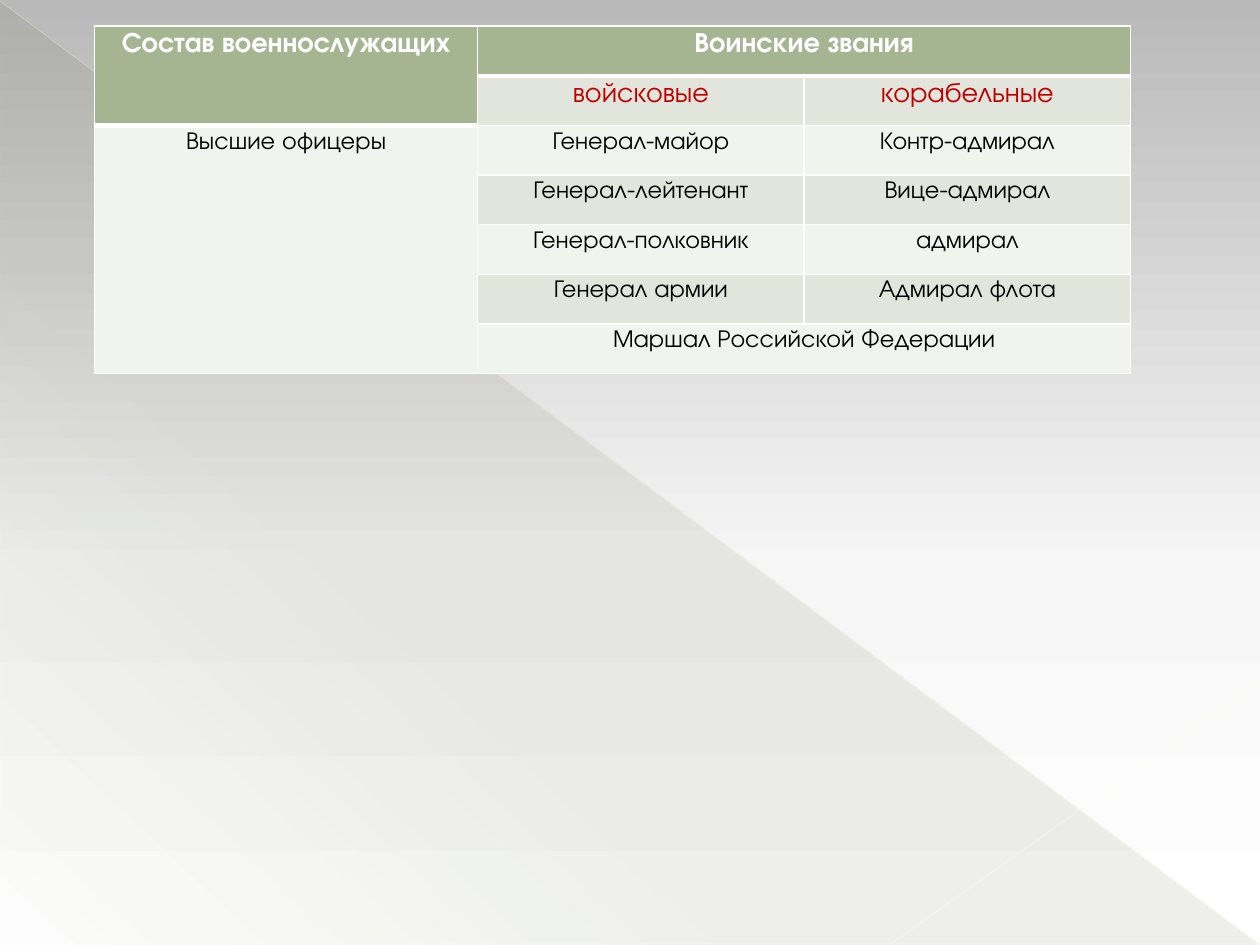
from dataclasses import dataclass

from pptx import Presentation
from pptx.dml.color import RGBColor
from pptx.enum.shapes import MSO_CONNECTOR, MSO_SHAPE
from pptx.enum.text import PP_ALIGN
from pptx.oxml import parse_xml
from pptx.oxml.ns import nsdecls
from pptx.util import Pt


@dataclass(frozen=True)
class Theme:
    font: str = "TeX Gyre Adventor"
    head_size: int = 16
    body_size: int = 14
    white: str = "FFFFFF"
    black: str = "000000"
    red: str = "C00000"
    header: str = "A5B592"
    bands: tuple = ("F0F3EE", "E1E5DC")
    back: tuple = ((0, "B9B9B9", 100), (60, "F6F6F6", 100), (100, "FFFFFF", 100))
    wedge: tuple = ((0, "444D26", 10), (70, "444D26", 8), (100, "444D26", 1))
    diagonal: str = "FFFDE3"
    corner: str = "FFFDE6"


def color_xml(rgb, opacity=100):
    return f'<a:srgbClr val="{rgb}"><a:alpha val="{opacity * 1000}"/></a:srgbClr>'


def set_gradient(fill, element, stops, angle):
    """Swap the element's fill for a linear gradient, angle clockwise in degrees."""
    fill.solid()
    solid = element.xpath(".//a:solidFill")[0]
    gs = "".join(f'<a:gs pos="{pos * 1000}">{color_xml(rgb, opacity)}</a:gs>'
                 for pos, rgb, opacity in stops)
    solid.getparent().replace(solid, parse_xml(
        f'<a:gradFill {nsdecls("a")} rotWithShape="1"><a:gsLst>{gs}</a:gsLst>'
        f'<a:lin ang="{angle * 60000}" scaled="0"/></a:gradFill>'))


class Deck:
    def __init__(self, theme, width, height):
        self.theme = theme
        self.prs = Presentation()
        self.prs.slide_width, self.prs.slide_height = Pt(width), Pt(height)
        self.s = self.prs.slides.add_slide(self.prs.slide_layouts[6])

    def background(self, stops, angle):
        set_gradient(self.s.background.fill, self.s.element.cSld, stops, angle)

    def triangle(self, x, y, w, h, stops, angle):
        sp = self.s.shapes.add_shape(MSO_SHAPE.RIGHT_TRIANGLE, Pt(x), Pt(y), Pt(w), Pt(h))
        sp.shadow.inherit = False
        sp.line.fill.background()
        set_gradient(sp.fill, sp.element.spPr, stops, angle)

    def line(self, x1, y1, x2, y2, rgb, width, opacity):
        ln = self.s.shapes.add_connector(MSO_CONNECTOR.STRAIGHT, Pt(x1), Pt(y1), Pt(x2), Pt(y2))
        ln.line.width = Pt(width)
        ln.line.color.rgb = RGBColor.from_string(rgb)
        clr = ln.element.spPr.xpath(".//a:srgbClr")[0]
        clr.append(parse_xml(f'<a:alpha {nsdecls("a")} val="{opacity * 1000}"/>'))
        ln.element.spPr.append(parse_xml(f'<a:effectLst {nsdecls("a")}/>'))

    def cell(self, cell, fill, text, size, rgb, bold, top, bottom):
        th = self.theme
        margins = dict(margin_left=Pt(6.75), margin_right=Pt(6.75),
                       margin_top=Pt(3.25), margin_bottom=Pt(3.25))
        for name, value in margins.items():
            setattr(cell, name, value)
        cell.fill.solid()
        cell.fill.fore_color.rgb = RGBColor.from_string(fill)
        tc_pr = cell._tc.get_or_add_tcPr()
        for i, (side, width) in enumerate(dict(L=1, R=1, T=top, B=bottom).items()):
            tc_pr.insert(i, parse_xml(
                f'<a:ln{side} {nsdecls("a")} w="{Pt(width)}"><a:solidFill>'
                f'{color_xml(th.white)}</a:solidFill></a:ln{side}>'))
        if not text:
            return
        p = cell.text_frame.paragraphs[0]
        p.alignment = PP_ALIGN.CENTER
        r = p.add_run()
        r.text = text
        for name, value in dict(name=th.font, size=Pt(size), bold=bold).items():
            setattr(r.font, name, value)
        r.font.color.rgb = RGBColor.from_string(rgb)

    def rank_table(self, x, y, widths, row_height, rows, merges):
        th = self.theme
        frame = self.s.shapes.add_table(len(rows), len(widths), Pt(x), Pt(y),
                                        Pt(sum(widths)), Pt(row_height * len(rows)))
        tbl = frame.table
        for column, width in zip(tbl.columns, widths):
            column.width = Pt(width)
        for row in tbl.rows:
            row.height = Pt(row_height)
        for (r1, c1), (r2, c2) in merges:
            tbl.cell(r1, c1).merge(tbl.cell(r2, c2))
        for r, texts in enumerate(rows):
            for c, text in enumerate(texts):
                last_header = 1 if c == 0 else 0
                is_header = r <= last_header
                rgb = th.white if is_header else th.red if r == 1 else th.black
                self.cell(tbl.cell(r, c),
                          fill=th.header if is_header else th.bands[r % 2],
                          text=text,
                          size=th.head_size if r < 2 else th.body_size,
                          rgb=rgb, bold=is_header,
                          top=3 if r == last_header + 1 else 1,
                          bottom=3 if is_header else 1)


ROWS = [
    ("Состав военнослужащих", "Воинские звания", ""),
    ("", "войсковые", "корабельные"),
    ("Высшие офицеры", "Генерал-майор", "Контр-адмирал"),
    ("", "Генерал-лейтенант", "Вице-адмирал"),
    ("", "Генерал-полковник", "адмирал"),
    ("", "Генерал армии", "Адмирал флота"),
    ("", "Маршал Российской Федерации", ""),
]
MERGES = [((0, 0), (1, 0)), ((0, 1), (0, 2)), ((2, 0), (6, 0)), ((6, 1), (6, 2))]


def main():
    theme = Theme()
    deck = Deck(theme, 720, 540)
    deck.background(theme.back, 90)
    deck.triangle(0.5, 1.1, 719, 538.5, theme.wedge, 133)
    deck.line(0, 0.5, 719.5, 539.5, theme.diagonal, 0.39, 35)
    deck.line(720, 389.5, 509, 539.5, theme.corner, 0.47, 45)
    deck.rank_table(54, 15, (219, 186.6, 186.6), 28.35, ROWS, MERGES)
    deck.prs.save("out.pptx")


if __name__ == "__main__":
    main()
